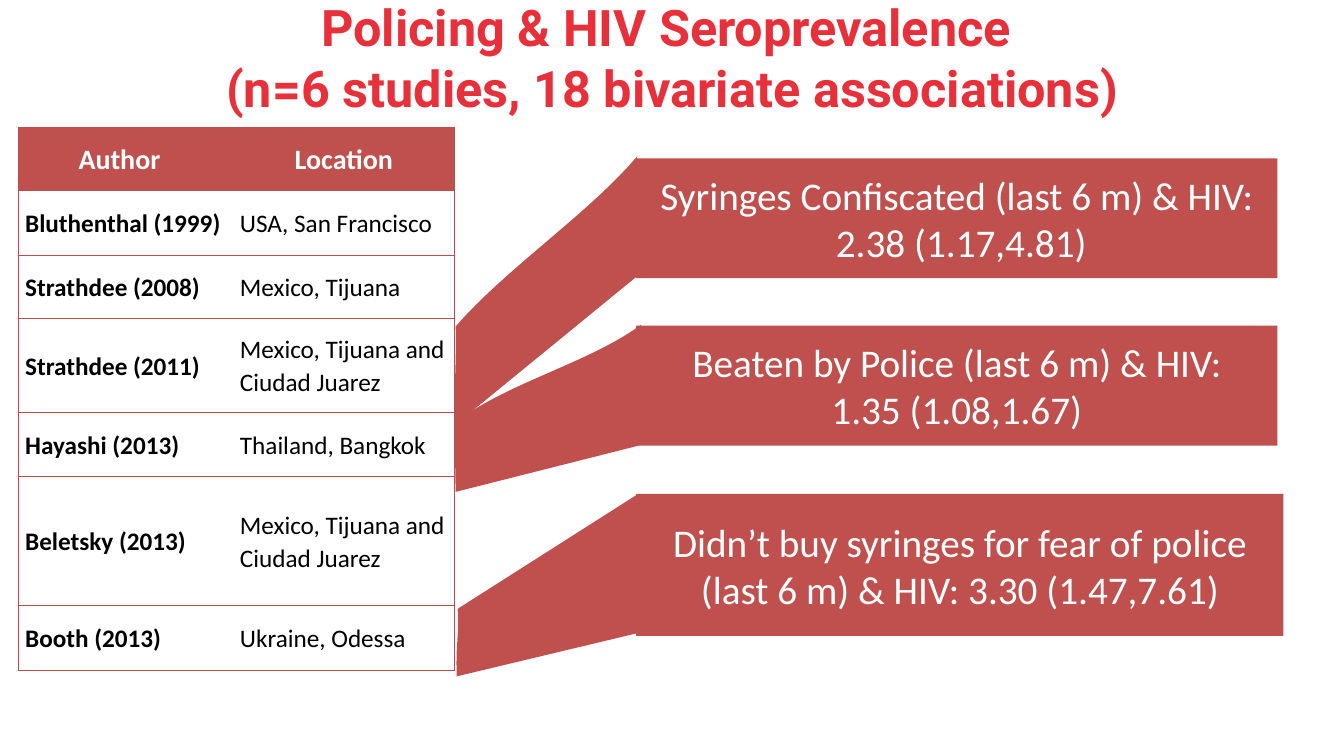
import pptx
import pptx.dml.color
import pptx.enum.shapes
import pptx.enum.text
import pptx.oxml
import pptx.oxml.ns
import pptx.util

PX = 9144  # EMU per px, 100 px to the inch
RED = pptx.dml.color.RGBColor(0xC0, 0x50, 0x4D)
RULE_RED = pptx.dml.color.RGBColor(0xBF, 0x4C, 0x48)
TITLE_RED = pptx.dml.color.RGBColor(0xE8, 0x30, 0x3B)
WHITE = pptx.dml.color.RGBColor(0xFF, 0xFF, 0xFF)
BLACK = pptx.dml.color.RGBColor(0, 0, 0)
CENTER = pptx.enum.text.PP_ALIGN.CENTER
LEFT = pptx.enum.text.PP_ALIGN.LEFT
MIDDLE = pptx.enum.text.MSO_ANCHOR.MIDDLE
RECTANGLE = pptx.enum.shapes.MSO_SHAPE.RECTANGLE

TITLE = "Policing & HIV Seroprevalence \v(n=6 studies, 18 bivariate associations)"
STUDIES = [
    ("Author", "Location"),
    ("Bluthenthal (1999)", "USA, San Francisco"),
    ("Strathdee (2008)", "Mexico, Tijuana"),
    ("Strathdee (2011)", "Mexico, Tijuana and Ciudad Juarez"),
    ("Hayashi (2013)", "Thailand, Bangkok"),
    ("Beletsky (2013)", "Mexico, Tijuana and Ciudad Juarez"),
    ("Booth (2013)", "Ukraine, Odessa"),
]
COLUMN_WIDTHS = (213, 220)
ROW_HEIGHTS = (63, 64, 63, 93, 64, 128, 64)
CELL_MARGIN = 7
AUTHOR_OFFSET = 12  # extra right margin that moves the first heading left

# Each finding: text, box, and the outline of the wedge leading to it.
# In an outline, two numbers are a corner and six are a Bézier curve.
FINDINGS = [
    ("Syringes Confiscated (last 6 m) & HIV:\n 2.38 (1.17,4.81)", (631, 157, 636, 119),
     [(451, 422), (450, 389, 453, 357, 452, 324), (500, 268, 585, 211, 632, 155),
      (630, 197, 634, 232, 632, 274)]),
    ("Beaten by Police (last 6 m) & HIV:\n1.35 (1.08,1.67)", (631, 323, 636, 119),
     [(452, 488), (451, 449, 452, 458, 451, 420), (499, 381, 585, 360, 636, 322),
      (634, 371, 635, 393, 634, 442)]),
    ("Didn’t buy syringes for fear of police (last 6 m) & HIV: 3.30 (1.47,7.61)",
     (631, 490, 642, 141),
     [(453, 671), (452, 633, 455, 643, 454, 604), (633, 490),
      (631, 539, 635, 579, 633, 628)]),
]


def emu(box):
    return [length * PX for length in box]


def apply(target, formats):
    for name, value in formats.items():
        setattr(target, name, value)


def style_text(frame, align, color, spacing=None, **font):
    for paragraph in frame.paragraphs:
        apply(paragraph, {"alignment": align, "line_spacing": spacing})
        for run in paragraph.runs:
            apply(run.font, font)
            run.font.color.rgb = color


def add_title(slide, box):
    title = slide.shapes.title
    apply(title, dict(zip(("left", "top", "width", "height"), emu(box))))
    title.text_frame.text = TITLE
    apply(title.text_frame, {"vertical_anchor": MIDDLE, "word_wrap": True})
    style_text(title.text_frame, CENTER, TITLE_RED, name="Roboto",
               size=pptx.util.Pt(36), bold=True)


def set_borders(cell, ruled_sides):
    """Rule the named sides of a cell and clear the others."""
    properties = cell._tc.get_or_add_tcPr()
    for position, side in enumerate("LRTB"):
        paint = (f'<a:solidFill><a:srgbClr val="{RULE_RED}"/></a:solidFill>'
                 if side in ruled_sides else "<a:noFill/>")
        properties.insert(position, pptx.oxml.parse_xml(
            f'<a:ln{side} {pptx.oxml.ns.nsdecls("a")} w="9525">{paint}</a:ln{side}>'))


def add_studies(slide, box):
    table = slide.shapes.add_table(len(STUDIES), len(COLUMN_WIDTHS), *emu(box)).table
    table.horz_banding = False
    for column, width in zip(table.columns, COLUMN_WIDTHS):
        column.width = width * PX
    for row, height in zip(table.rows, ROW_HEIGHTS):
        row.height = height * PX
    for r, study in enumerate(STUDIES):
        header = r == 0
        for c, text in enumerate(study):
            cell = table.cell(r, c)
            cell.text = text
            apply(cell, {"margin_left": CELL_MARGIN * PX, "margin_right": CELL_MARGIN * PX,
                         "margin_top": 0, "margin_bottom": 0, "vertical_anchor": MIDDLE})
            style_text(cell.text_frame, CENTER if header else LEFT,
                       WHITE if header else BLACK, 1.07, name="Calibri",
                       size=pptx.util.Pt(20 if header else 18), bold=header or c == 0)
            if header:
                cell.fill.solid()
                cell.fill.fore_color.rgb = RED
            else:
                cell.fill.background()
            set_borders(cell, "TB" + "LR"[c])
    table.cell(0, 0).margin_right = (CELL_MARGIN + AUTHOR_OFFSET) * PX


def paint_red(shape):
    shape.shadow.inherit = False
    shape.fill.solid()
    shape.fill.fore_color.rgb = RED
    shape.line.fill.background()


def add_wedge(slide, outline):
    """Lay the outline out as straight segments, then bend the curved ones."""
    points = [(segment[i] * PX, segment[i + 1] * PX)
              for segment in outline for i in range(0, len(segment), 2)]
    builder = slide.shapes.build_freeform(*points[0])
    builder.add_line_segments(points[1:], close=True)
    wedge = builder.convert_to_shape()
    paint_red(wedge)
    segments = iter(wedge._element.findall(".//" + pptx.oxml.ns.qn("a:lnTo")))
    for segment in outline[1:]:
        first = next(segments)
        if len(segment) == 6:
            curve = pptx.oxml.parse_xml(
                f'<a:cubicBezTo {pptx.oxml.ns.nsdecls("a")}/>')
            first.addprevious(curve)
            for line in (first, next(segments), next(segments)):
                curve.append(line[0])
                line.getparent().remove(line)


def add_finding(slide, text, box):
    finding = slide.shapes.add_shape(RECTANGLE, *emu(box))
    paint_red(finding)
    finding.text_frame.text = text
    apply(finding.text_frame, {"vertical_anchor": MIDDLE, "word_wrap": True})
    style_text(finding.text_frame, CENTER, WHITE, name="Calibri", size=pptx.util.Pt(28))


def main():
    deck = pptx.Presentation()
    apply(deck, {"slide_width": 1333 * PX, "slide_height": 750 * PX})
    slide = deck.slides.add_slide(deck.slide_layouts[5])
    add_title(slide, (67, -6, 1200, 125))
    add_studies(slide, (18, 126, sum(COLUMN_WIDTHS), sum(ROW_HEIGHTS)))
    for text, box, _ in FINDINGS:
        add_finding(slide, text, box)
    for _, _, outline in FINDINGS:
        add_wedge(slide, outline)
    deck.save("out.pptx")


if __name__ == "__main__":
    main()
